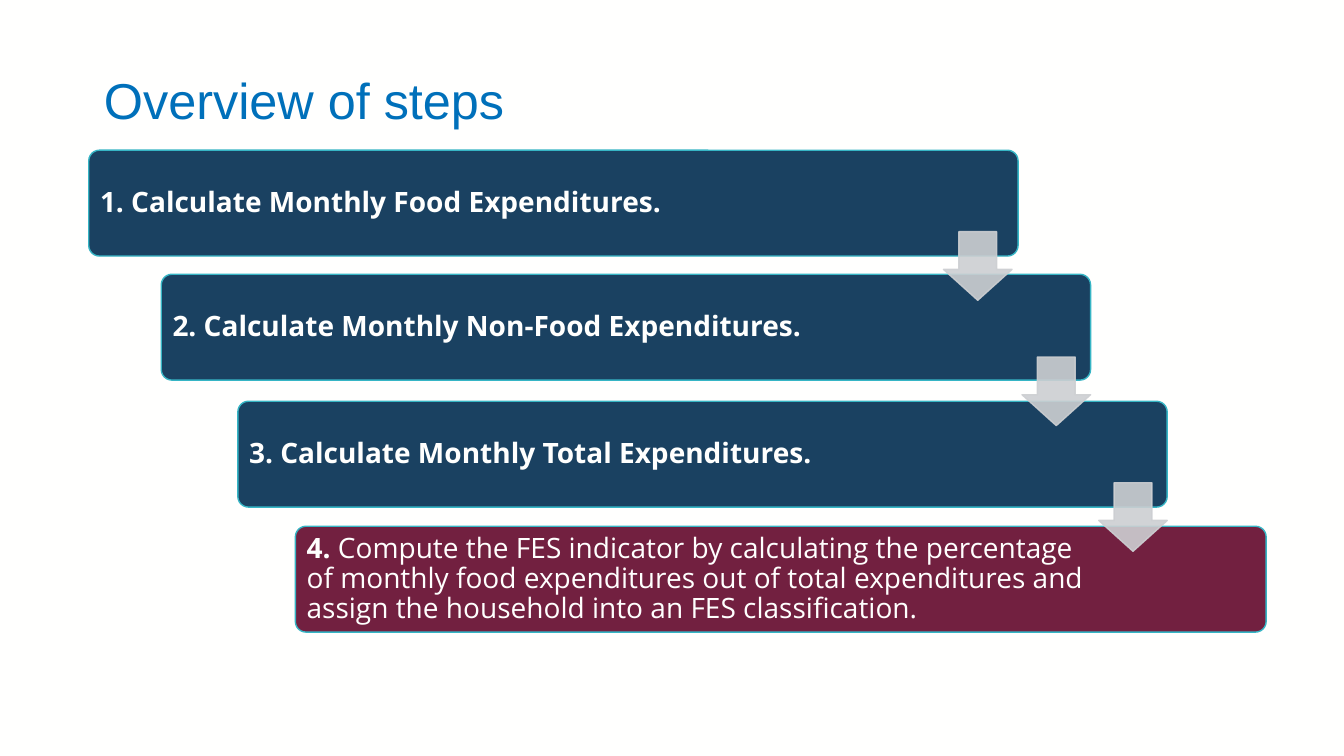
"""Build the slide that outlines the four steps of the FES calculation."""
from dataclasses import dataclass

from lxml import etree
from pptx import Presentation
from pptx.dml.color import RGBColor
from pptx.enum.shapes import MSO_SHAPE
from pptx.enum.text import MSO_ANCHOR, PP_ALIGN
from pptx.oxml.ns import qn
from pptx.shapes.autoshape import Shape
from pptx.slide import Slide
from pptx.util import Pt

ROUNDED = MSO_SHAPE.ROUNDED_RECTANGLE
DOWN_ARROW = MSO_SHAPE.DOWN_ARROW
MIDDLE = MSO_ANCHOR.MIDDLE
LEFT = PP_ALIGN.LEFT

WHITE = "FFFFFE"
NAVY = "1A4161"
MAROON = "722040"
TEAL = "36B5C5"
GREY = "CDCFD2"
BLUE = "0070BA"

STEP_HEIGHT = 75.6
ARROW_SIZE = 49
INSET = 5.8
RIGHT_INSET = 115


@dataclass(frozen=True)
class Step:
    left: float
    top: float
    label: str
    detail: str = ""
    width: float = 663.8
    color: str = NAVY


@dataclass(frozen=True)
class Arrow:
    left: float
    top: float


STEPS = (
    Step(63.4, 107.3, "1. Calculate Monthly Food Expenditures."),
    Step(115.2, 195.9, "2. Calculate Monthly Non-Food Expenditures."),
    Step(169.9, 286.6, "3. Calculate Monthly Total Expenditures."),
    Step(
        211, 375.9, "4. ",
        "Compute the FES indicator by calculating the percentage of monthly food "
        "expenditures out of total expenditures and assign the household into an "
        "FES classification.",
        width=693.4, color=MAROON,
    ),
)
ARROWS = (Arrow(673.9, 165.5), Arrow(730, 255), Arrow(784.8, 344.8))


def rgb(color: str) -> RGBColor:
    return RGBColor.from_string(color)


def paint(shape: Shape, fill: str, line: str) -> None:
    shape.shadow.inherit = False
    shape.fill.solid()
    shape.fill.fore_color.rgb = rgb(fill)
    shape.line.color.rgb = rgb(line)
    shape.line.width = Pt(1)


def add_title(slide: Slide, wording: str) -> None:
    title = slide.shapes.title
    title.left, title.top, title.width, title.height = Pt(67), Pt(28.8), Pt(830), Pt(90.5)
    title.text_frame.text = wording
    title.text_frame.vertical_anchor = MIDDLE
    heading = title.text_frame.paragraphs[0]
    heading.alignment = LEFT
    heading.line_spacing = 0.9
    heading.font.name = "Arial"
    heading.font.size = Pt(36)
    heading.font.color.rgb = rgb(BLUE)


def add_step(slide: Slide, step: Step) -> None:
    box = slide.shapes.add_shape(
        ROUNDED, Pt(step.left), Pt(step.top), Pt(step.width), Pt(STEP_HEIGHT)
    )
    box.adjustments[0] = 0.1
    paint(box, step.color, TEAL)
    frame = box.text_frame
    frame.word_wrap = True
    frame.vertical_anchor = MIDDLE
    frame.margin_left = frame.margin_top = frame.margin_bottom = Pt(INSET)
    frame.margin_right = Pt(RIGHT_INSET)
    sentence = frame.paragraphs[0]
    sentence.alignment = LEFT
    sentence.line_spacing = 0.9
    sentence.font.name = "Open Sans"
    sentence.font.size = Pt(20)
    sentence.font.color.rgb = rgb(WHITE)
    label = sentence.add_run()
    label.text = step.label
    label.font.bold = True
    if step.detail:
        sentence.add_run().text = step.detail


def add_arrow(slide: Slide, arrow: Arrow) -> None:
    pointer = slide.shapes.add_shape(
        DOWN_ARROW, Pt(arrow.left), Pt(arrow.top), Pt(ARROW_SIZE), Pt(ARROW_SIZE)
    )
    pointer.adjustments[0] = 0.55
    pointer.adjustments[1] = 0.45
    paint(pointer, GREY, GREY)
    for color in pointer.element.spPr.iter(qn("a:srgbClr")):
        etree.SubElement(color, qn("a:alpha"), val="90000")


def main() -> None:
    deck = Presentation()
    deck.slide_width, deck.slide_height = Pt(960), Pt(540)
    slide = deck.slides.add_slide(deck.slide_layouts[5])
    slide.background.fill.solid()
    slide.background.fill.fore_color.rgb = rgb(WHITE)
    add_title(slide, "Overview of steps")
    for step in STEPS:
        add_step(slide, step)
    for arrow in ARROWS:
        add_arrow(slide, arrow)
    deck.save("out.pptx")


if __name__ == "__main__":
    main()
